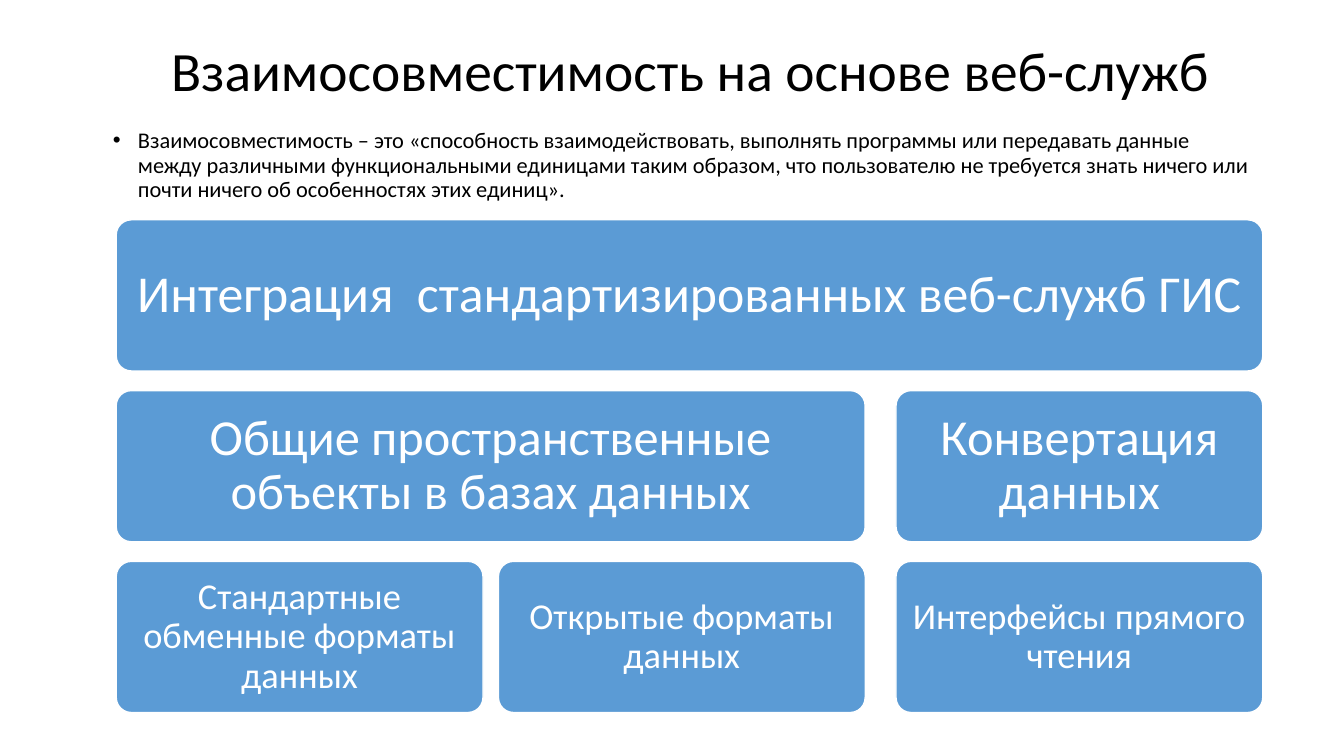
from lxml.etree import SubElement
from pptx import Presentation
from pptx.dml.color import RGBColor
from pptx.enum.shapes import MSO_SHAPE as SHAPE
from pptx.enum.text import MSO_ANCHOR as ANCHOR, PP_ALIGN as ALIGN
from pptx.oxml.ns import qn
from pptx.util import Pt

BLACK = RGBColor(0x00, 0x00, 0x00)
WHITE = RGBColor(0xFF, 0xFF, 0xFF)
BLUE = RGBColor(0x5B, 0x9B, 0xD5)

LEFT, TOP = 83, 157
CARD_W, CARD_H = 262, 108
INNER_GAP, GROUP_GAP, ROW_PITCH = 11, 22, 122
COLUMNS = [
    LEFT,
    LEFT + CARD_W + INNER_GAP,
    LEFT + 2 * CARD_W + INNER_GAP + GROUP_GAP,
]

CARDS = [
    (0, 0, 2, 37, "Интеграция  cтандартизированных веб-служб ГИС"),
    (1, 0, 1, 36, "Общие пространственные объекты в базах данных"),
    (1, 2, 2, 36, "Конвертация данных"),
    (2, 0, 0, 26, "Стандартные обменные форматы данных"),
    (2, 1, 1, 26, "Открытые форматы данных"),
    (2, 2, 2, 26, "Интерфейсы прямого чтения"),
]


def apply(target, formats):
    for name, value in formats.items():
        setattr(target, name, value)


class SlideBuilder:
    font = "Calibri"
    line_spacing = 0.9

    def __init__(self, slide):
        self.slide = slide

    def fill_text(self, sp, text, size, color, align, frame):
        tf = sp.text_frame
        apply(tf, {"word_wrap": True, **frame})
        p = tf.paragraphs[0]
        apply(p, {"alignment": align, "line_spacing": self.line_spacing})
        r = p.add_run()
        r.text = text
        apply(r.font, {"name": self.font, "size": Pt(size)})
        r.font.color.rgb = color
        return p

    def text(self, box, text, size, align=ALIGN.LEFT, anchor=ANCHOR.TOP):
        sp = self.slide.shapes.add_textbox(*map(Pt, box))
        return self.fill_text(sp, text, size, BLACK, align, {"vertical_anchor": anchor})

    def bullet(self, box, text, size, indent=18):
        p = self.text(box, text, size)
        pPr = p._p.get_or_add_pPr()
        pPr.set("marL", str(Pt(indent)))
        pPr.set("indent", str(-Pt(indent)))
        SubElement(pPr, qn("a:buFont"), typeface="Arial")
        SubElement(pPr, qn("a:buChar"), char="•")

    def card(self, box, text, size):
        sp = self.slide.shapes.add_shape(SHAPE.ROUNDED_RECTANGLE, *map(Pt, box))
        sp.adjustments[0] = 0.1
        sp.shadow.inherit = False
        sp.fill.solid()
        sp.fill.fore_color.rgb = BLUE
        sp.line.color.rgb = WHITE
        sp.line.width = Pt(1)
        sides = ("left", "top", "right", "bottom")
        frame = {f"margin_{side}": Pt(size * 0.28) for side in sides}
        frame["vertical_anchor"] = ANCHOR.MIDDLE
        self.fill_text(sp, text, size, WHITE, ALIGN.CENTER, frame)


def main():
    prs = Presentation()
    apply(prs, {"slide_width": Pt(960), "slide_height": Pt(540)})
    s = SlideBuilder(prs.slides.add_slide(prs.slide_layouts[6]))
    s.text(
        (66, 29, 854, 47),
        "Взаимосовместимость на основе веб-служб",
        39.6,
        ALIGN.CENTER,
        ANCHOR.MIDDLE,
    )
    s.bullet(
        (73.5, 89, 828, 343),
        "Взаимосовместимость – это «способность взаимодействовать, выполнять "
        "программы или передавать данные между различными функциональными "
        "единицами таким образом, что пользователю не требуется знать ничего "
        "или почти ничего об особенностях этих единиц».",
        16,
    )
    for row, first, last, size, text in CARDS:
        width = COLUMNS[last] + CARD_W - COLUMNS[first]
        s.card((COLUMNS[first], TOP + row * ROW_PITCH, width, CARD_H), text, size)
    prs.save("out.pptx")


if __name__ == "__main__":
    main()
